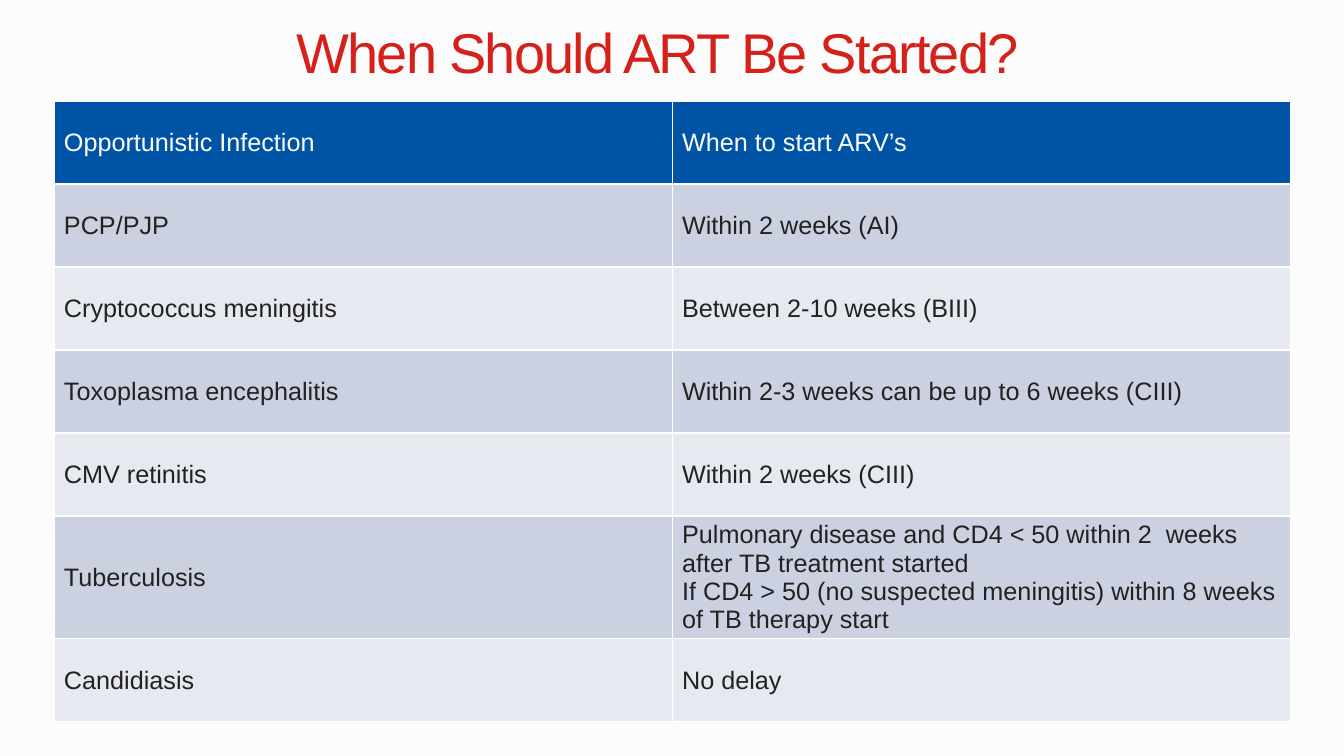
import lxml.etree
import pptx
import pptx.dml.color
import pptx.enum.text
import pptx.oxml.ns
import pptx.util

RGBColor = pptx.dml.color.RGBColor
WHITE = RGBColor(0xFF, 0xFF, 0xFF)
PAPER = RGBColor(0xFC, 0xFC, 0xFC)
RED = RGBColor(0xD6, 0x20, 0x1A)
BLUE = RGBColor(0x00, 0x54, 0xA6)
DARK_BAND = RGBColor(0xCC, 0xD1, 0xE1)
LIGHT_BAND = RGBColor(0xE7, 0xE9, 0xF1)
INK = RGBColor(0x22, 0x22, 0x22)

ROW_HEIGHT = 83
TUBERCULOSIS_HEIGHT = 123
START_TIMES = [
    ("Opportunistic Infection", "When to start ARV’s"),
    ("PCP/PJP", "Within 2 weeks (AI)"),
    ("Cryptococcus meningitis", "Between 2-10 weeks (BIII)"),
    ("Toxoplasma encephalitis", "Within 2-3 weeks can be up to 6 weeks (CIII)"),
    ("CMV retinitis", "Within 2 weeks (CIII)"),
    ("Tuberculosis",
     "Pulmonary disease and CD4 < 50 within 2  weeks after TB treatment started\n"
     "If CD4 > 50 (no suspected meningitis) within 8 weeks of TB therapy start"),
    ("Candidiasis", "No delay"),
]


def px(length):
    """Turn px, at 100.8 to the inch, into EMU."""
    return pptx.util.Emu(round(length * 914400 / 100.8))


class SlideBuilder:
    """Holds the font and the current slide."""

    font_name = "Arial"

    def __init__(self, slide):
        self.slide = slide

    def background(self, color):
        fill = self.slide.background.fill
        fill.solid()
        fill.fore_color.rgb = color

    def format_text(self, text_frame, size, color):
        for paragraph in text_frame.paragraphs:
            for run in paragraph.runs:
                run.font.name = self.font_name
                run.font.size = pptx.util.Pt(size)
                run.font.bold = False
                run.font.color.rgb = color

    def title(self, text, left, top, width, height):
        shape = self.slide.shapes.title
        shape.left, shape.top = px(left), px(top)
        shape.width, shape.height = px(width), px(height)
        text_frame = shape.text_frame
        text_frame.text = text
        text_frame.word_wrap = True
        text_frame.vertical_anchor = pptx.enum.text.MSO_ANCHOR.MIDDLE
        text_frame.margin_left = text_frame.margin_right = px(13)
        text_frame.margin_top = text_frame.margin_bottom = px(7)
        paragraph = text_frame.paragraphs[0]
        paragraph.alignment = pptx.enum.text.PP_ALIGN.CENTER
        self.format_text(text_frame, 40, RED)
        paragraph.runs[0].font._element.set("spc", "-130")

    def cell_borders(self, cell, color, points):
        properties = cell._tc.get_or_add_tcPr()
        qn = pptx.oxml.ns.qn
        for index, side in enumerate(("a:lnL", "a:lnR", "a:lnT", "a:lnB")):
            line = lxml.etree.Element(qn(side), w=str(pptx.util.Pt(points)))
            fill = lxml.etree.SubElement(line, qn("a:solidFill"))
            lxml.etree.SubElement(fill, qn("a:srgbClr"), val=str(color))
            properties.insert(index, line)

    def cell(self, cell, text, fill_color, text_color):
        cell.text = text
        cell.fill.solid()
        cell.fill.fore_color.rgb = fill_color
        cell.vertical_anchor = pptx.enum.text.MSO_ANCHOR.MIDDLE
        cell.margin_left = cell.margin_right = px(10)
        cell.margin_top = cell.margin_bottom = px(5)
        self.format_text(cell.text_frame, 18, text_color)
        self.cell_borders(cell, WHITE, 1)

    def table(self, rows, heights, left, top, width):
        frame = self.slide.shapes.add_table(
            len(rows), len(rows[0]), px(left), px(top), px(width), px(sum(heights)))
        table = frame.table
        for row_index, (texts, height) in enumerate(zip(rows, heights)):
            table.rows[row_index].height = px(height)
            band = DARK_BAND if row_index % 2 else LIGHT_BAND
            fill_color, text_color = (band, INK) if row_index else (BLUE, WHITE)
            for column_index, text in enumerate(texts):
                self.cell(table.cell(row_index, column_index), text, fill_color, text_color)


def main():
    presentation = pptx.Presentation()
    presentation.slide_width = pptx.util.Inches(13.33)
    presentation.slide_height = pptx.util.Inches(7.5)
    title_only = presentation.slide_layouts.get_by_name("Title Only")
    builder = SlideBuilder(presentation.slides.add_slide(title_only))
    builder.background(PAPER)
    builder.title("When Should ART Be Started?", 66, 12, 1183, 78)
    heights = [TUBERCULOSIS_HEIGHT if name == "Tuberculosis" else ROW_HEIGHT
               for name, _ in START_TIMES]
    builder.table(START_TIMES, heights, 54, 101, 1236)
    presentation.save("out.pptx")


if __name__ == "__main__":
    main()
